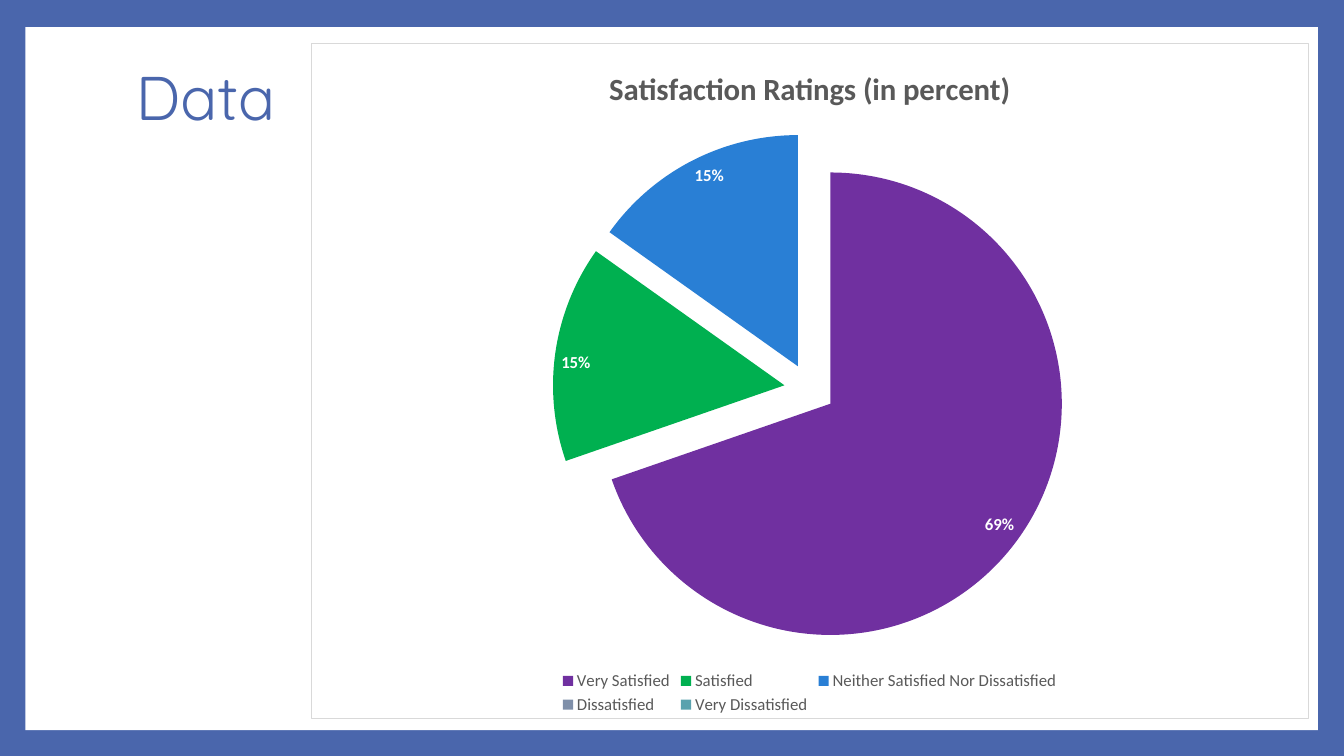
from lxml import etree
from pptx import Presentation
from pptx.chart.data import CategoryChartData
from pptx.dml.color import RGBColor
from pptx.enum.chart import XL_CHART_TYPE, XL_LABEL_POSITION, XL_LEGEND_POSITION
from pptx.enum.shapes import MSO_SHAPE
from pptx.enum.text import MSO_ANCHOR
from pptx.oxml import parse_xml
from pptx.oxml.ns import nsdecls, qn
from pptx.util import Inches, Pt

PIE = XL_CHART_TYPE.PIE
INSIDE_END = XL_LABEL_POSITION.INSIDE_END
BOTTOM = XL_LEGEND_POSITION.BOTTOM
RECTANGLE = MSO_SHAPE.RECTANGLE
MIDDLE = MSO_ANCHOR.MIDDLE

WIDTH, HEIGHT = 13.33, 7.5
COLORS = {
    "frame": "4A66AC", "panel": "FFFFFF", "gray": "595959",
    "border": "D9D9D9", "text": "000000",
}
RATINGS = [
    ("Very Satisfied", 69, "7030A0"),
    ("Satisfied", 15, "00B050"),
    ("Neither Satisfied Nor Dissatisfied", 15, "297FD5"),
    ("Dissatisfied", 0, "7F8FA9"),
    ("Very Dissatisfied", 0, "5AA2AE"),
]


def rgb(value):
    return RGBColor.from_string(COLORS.get(value, value))


def set_font(font, name, size, color, bold=False):
    font.name, font.size, font.bold = name, Pt(size), bold
    font.color.rgb = rgb(color)


class RatingSlide:
    heading_font = "Quicksand"
    chart_font = "Calibri"

    def __init__(self, presentation):
        self.size = presentation.slide_width, presentation.slide_height
        self.slide = presentation.slides.add_slide(presentation.slide_layouts[6])
        self.shapes = self.slide.shapes

    def box(self, left, top, width, height):
        """Turn percentages of the slide's size into lengths."""
        across, down = self.size
        return [round(share * side / 100) for share, side in
                ((left, across), (top, down), (width, across), (height, down))]

    def background(self, color):
        fill = self.slide.background.fill
        fill.solid()
        fill.fore_color.rgb = rgb(color)

    def panel(self, color, *place):
        shape = self.shapes.add_shape(RECTANGLE, *self.box(*place))
        shape.shadow.inherit = False
        shape.fill.solid()
        shape.fill.fore_color.rgb = rgb(color)
        shape.line.fill.background()

    def heading(self, text, *place):
        frame = self.shapes.add_textbox(*self.box(*place)).text_frame
        frame.word_wrap = True
        frame.vertical_anchor = MIDDLE
        paragraph = frame.paragraphs[0]
        paragraph.text = text
        paragraph.line_spacing = 0.9
        set_font(paragraph.font, self.heading_font, 44, "frame")

    def pie(self, title, ratings, explosion, *place):
        data = CategoryChartData(number_format="0")
        data.categories = [name for name, _, _ in ratings]
        data.add_series(title, [value for _, value, _ in ratings])
        chart = self.shapes.add_chart(PIE, *self.box(*place), data).chart
        set_font(chart.font, self.chart_font, 10, "text")

        chart.has_title = True
        chart.chart_title.include_in_layout = False
        paragraph = chart.chart_title.text_frame.paragraphs[0]
        paragraph.text = title
        set_font(paragraph.font, self.chart_font, 22, "gray", True)

        chart.has_legend = True
        chart.legend.position = BOTTOM
        chart.legend.include_in_layout = False
        set_font(chart.legend.font, self.chart_font, 12, "gray")

        chart.plots[0].vary_by_categories = True
        series = chart.plots[0].series[0]
        for index, (_, _, color) in enumerate(ratings):
            fill = series.points[index].format.fill
            fill.solid()
            fill.fore_color.rgb = rgb(color)
        self.explode(series, explosion)
        self.percent_labels(series, ratings)
        self.chart_border(chart)

    def explode(self, series, explosion):
        element = etree.Element(qn("c:explosion"), val=str(explosion))
        series._element.find(qn("c:dPt")).addprevious(element)

    def percent_labels(self, series, ratings):
        """Label each slice with its percent value, leaving empty slices bare."""
        labels = series.data_labels
        labels.show_value = True
        labels.number_format, labels.number_format_is_linked = '0"%"', False
        labels.position = INSIDE_END
        set_font(labels.font, self.chart_font, 12, "panel", True)
        empty = [index for index, (_, value, _) in enumerate(ratings) if not value]
        for place, index in enumerate(empty):
            label = etree.Element(qn("c:dLbl"))
            etree.SubElement(label, qn("c:idx"), val=str(index))
            etree.SubElement(label, qn("c:delete"), val="1")
            labels._element.insert(place, label)

    def chart_border(self, chart):
        border = parse_xml(
            f'<c:spPr {nsdecls("c", "a")}><a:noFill/><a:ln w="{Pt(0.75)}"><a:solidFill>'
            f'<a:srgbClr val="{COLORS["border"]}"/></a:solidFill></a:ln></c:spPr>')
        chart.element.find(qn("c:txPr")).addprevious(border)


def main():
    presentation = Presentation()
    presentation.slide_width = Inches(WIDTH)
    presentation.slide_height = Inches(HEIGHT)
    page = RatingSlide(presentation)
    page.background("frame")
    page.panel("panel", 1.88, 3.6, 96.17, 92.97)
    page.heading("Data", 9.38, 3.4, 81.02, 19.73)
    page.pie("Satisfaction Ratings (in percent)", RATINGS, 11, 23.11, 5.67, 74.27, 89.47)
    presentation.save("out.pptx")


if __name__ == "__main__":
    main()
